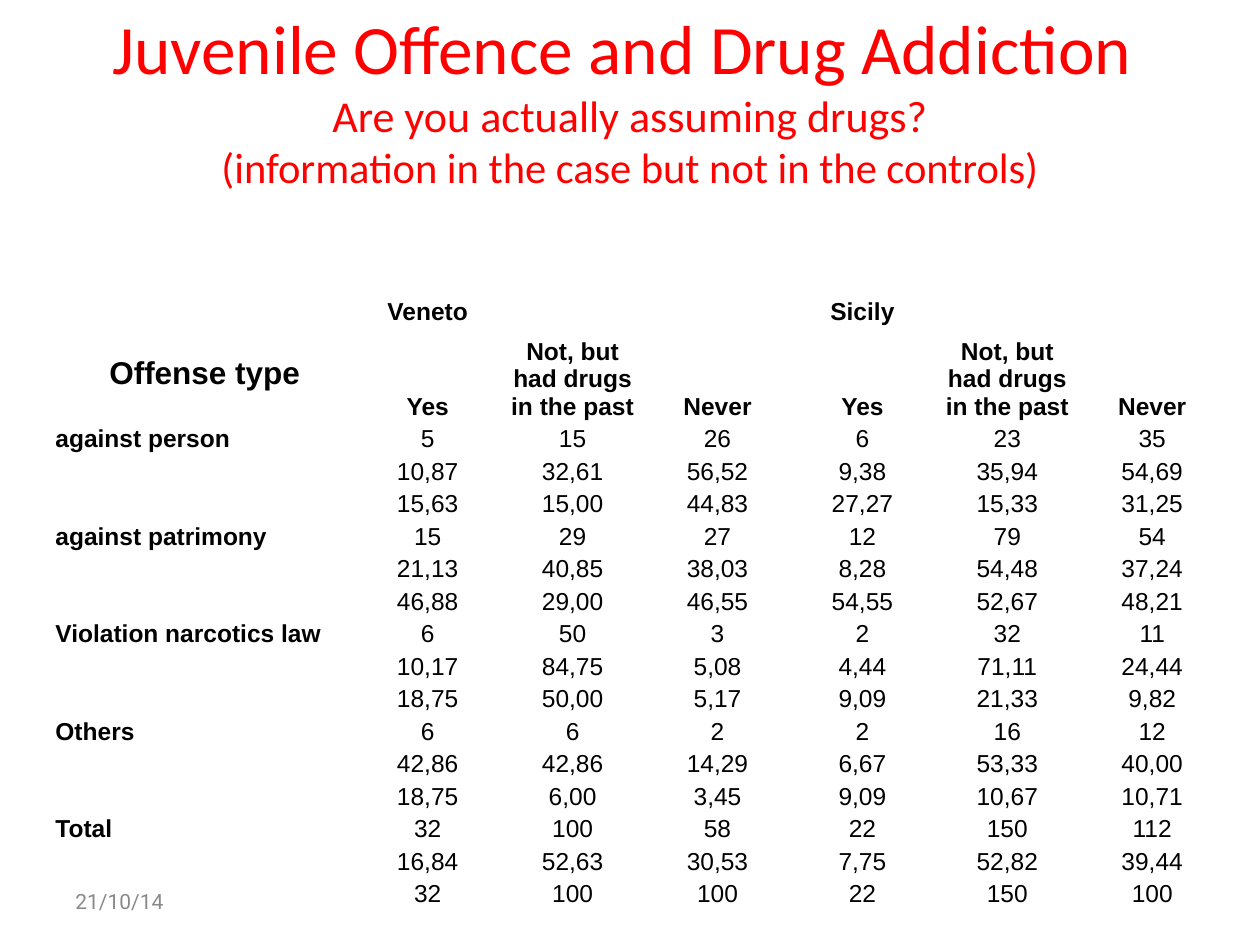
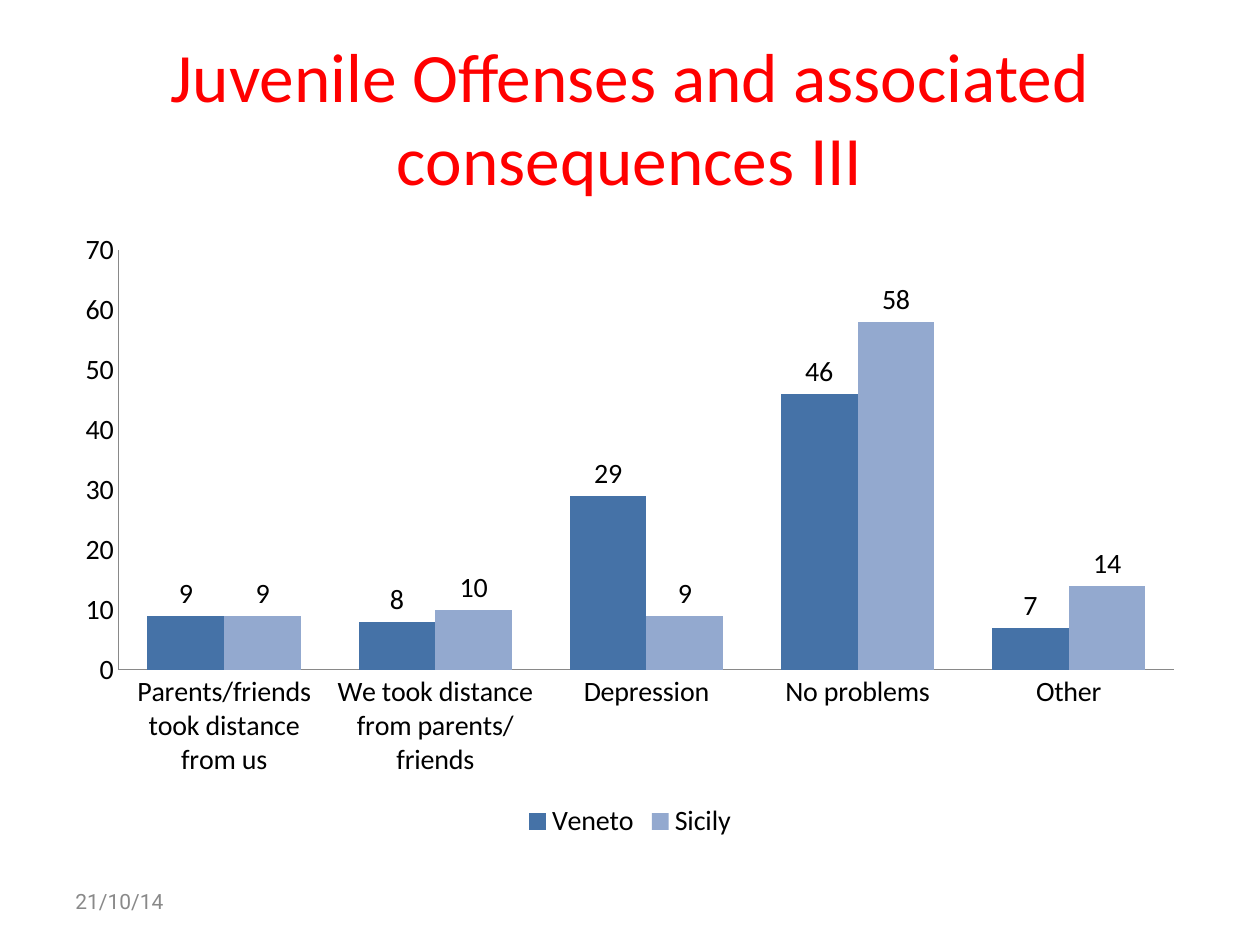
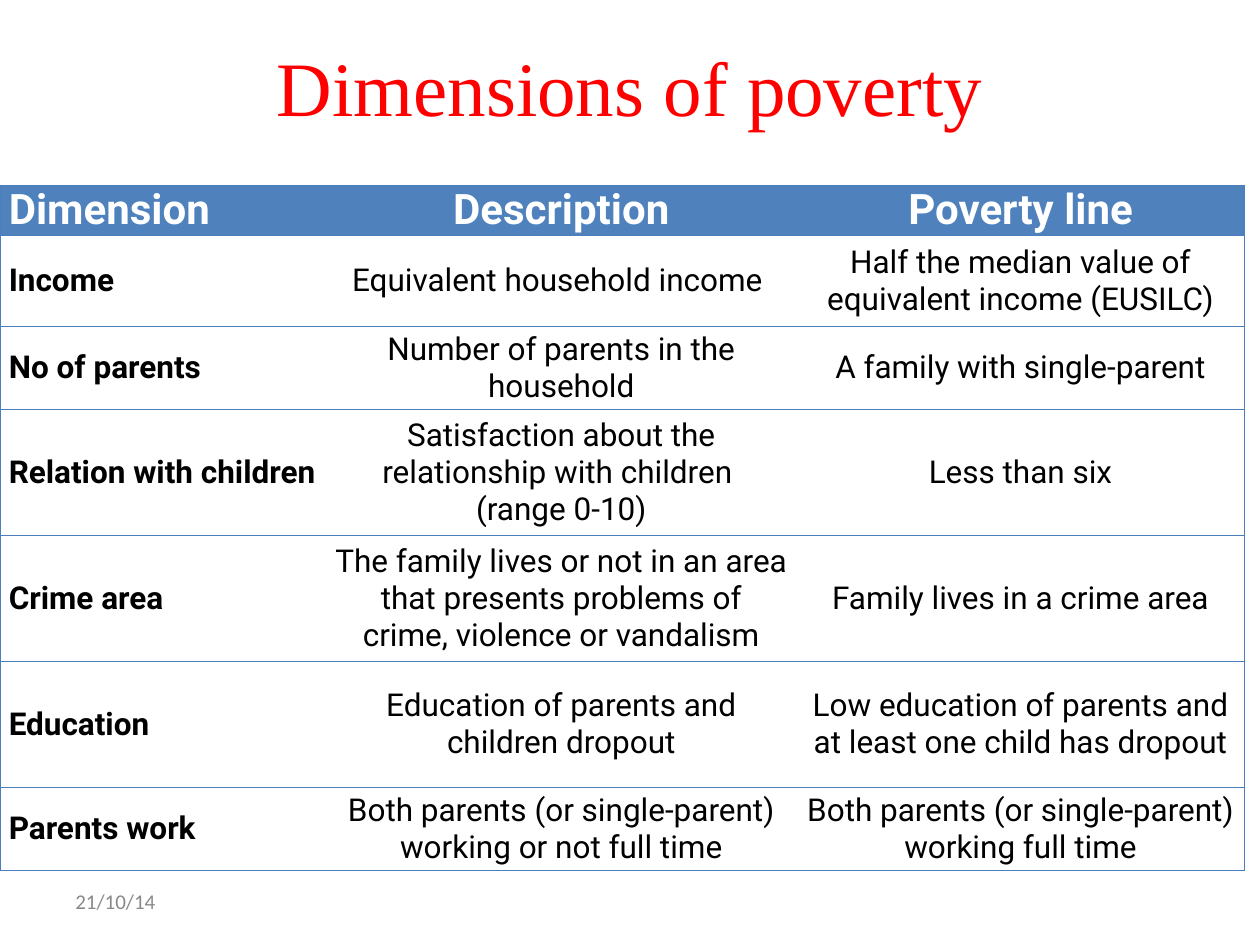
from lxml import etree
from pptx import Presentation
from pptx.chart.data import CategoryChartData
from pptx.dml.color import RGBColor
from pptx.enum import chart as charts, text
from pptx.oxml.ns import qn
from pptx.util import Inches, Pt

RED = RGBColor(0xFF, 0x00, 0x00)
BLACK = RGBColor(0x00, 0x00, 0x00)
WHITE = RGBColor(0xFF, 0xFF, 0xFF)
DATE_GREY = RGBColor(0x89, 0x89, 0x89)
HEADER_BLUE = RGBColor(0x4F, 0x81, 0xBD)
RULE_BLUE = RGBColor(0x4B, 0x7E, 0xBC)
VENETO_BLUE = RGBColor(0x45, 0x72, 0xA7)
SICILY_BLUE = RGBColor(0x93, 0xA9, 0xCF)
PLAIN_TABLE_STYLE = "{2D5ABB26-0587-4C30-8999-92F81FD0307C}"
LEFT, CENTER = text.PP_ALIGN.LEFT, text.PP_ALIGN.CENTER
MIDDLE, BOTTOM = text.MSO_ANCHOR.MIDDLE, text.MSO_ANCHOR.BOTTOM


def write(frame, paragraphs, font, color, align, bold=False):
    """Fill a text frame; a paragraph is a list of (words, size) lines."""
    frame.word_wrap = True
    for i, lines in enumerate(paragraphs):
        para = frame.paragraphs[0] if i == 0 else frame.add_paragraph()
        para.alignment = align
        for j, (words, size) in enumerate(lines):
            if j:
                para.add_line_break()
            span = para.add_run()
            span.text = words
            span.font.name = font
            span.font.size = Pt(size)
            span.font.bold = bold
            span.font.color.rgb = color


def add_plain_table(page, left, top, widths, heights):
    frame = page.shapes.add_table(len(heights), len(widths), Inches(left), Inches(top),
                                  Inches(sum(widths)), Inches(sum(heights)))
    table = frame.table
    table.first_row = table.horz_banding = False
    table._tbl.tblPr.find(qn("a:tableStyleId")).text = PLAIN_TABLE_STYLE
    for column, width in zip(table.columns, widths):
        column.width = Inches(width)
    for row, height in zip(table.rows, heights):
        row.height = Inches(height)
    for cell in table.iter_cells():
        cell.fill.background()
    return table


deck = Presentation()
deck.slide_width, deck.slide_height = Inches(10), Inches(7.5)

# Titles and dates: top and height, font, lines, date font
headings = [
    (0.3, 1.25, "Calibri", [("Juvenile Offence and Drug Addiction ", 39.6),
                            ("Are you actually assuming drugs?", 25.2),
                            ("(information in the case but not in the controls)", 24.3)], "Roboto"),
    (0.3, 1.25, "Calibri", [("Juvenile Offenses and associated consequences III", 39.6)], "Roboto"),
    (0.21, 0.94, "Times New Roman", [("Dimensions of poverty", 44)], "Calibri"),
]
pages, titles = [], []
for top, height, font, lines, date_font in headings:
    page = deck.slides.add_slide(deck.slide_layouts[6])
    title = page.shapes.add_textbox(Inches(0.5), Inches(top), Inches(9), Inches(height))
    date = page.shapes.add_textbox(Inches(0.5), Inches(6.95), Inches(2.33), Inches(0.4))
    title.text_frame.vertical_anchor = date.text_frame.vertical_anchor = MIDDLE
    write(title.text_frame, [lines], font, RED, CENTER)
    write(date.text_frame, [[("21/10/14", 12)]], date_font, DATE_GREY, LEFT)
    pages.append(page)
    titles.append(title)
offence_page, consequence_page, poverty_page = pages
titles[0].text_frame.margin_bottom = Inches(0.33)

# Slide 1: counts, row percentages and column percentages by offense type
answers = ["Yes", "Not, but had drugs in the past", "Never"]
offences = {
    "against person": ["5 15 26 6 23 35",
                       "10,87 32,61 56,52 9,38 35,94 54,69",
                       "15,63 15,00 44,83 27,27 15,33 31,25"],
    "against patrimony": ["15 29 27 12 79 54",
                          "21,13 40,85 38,03 8,28 54,48 37,24",
                          "46,88 29,00 46,55 54,55 52,67 48,21"],
    "Violation narcotics law": ["6 50 3 2 32 11",
                                "10,17 84,75 5,08 4,44 71,11 24,44",
                                "18,75 50,00 5,17 9,09 21,33 9,82"],
    "Others": ["6 6 2 2 16 12",
               "42,86 42,86 14,29 6,67 53,33 40,00",
               "18,75 6,00 3,45 9,09 10,67 10,71"],
    "Total": ["32 100 58 22 150 112",
              "16,84 52,63 30,53 7,75 52,82 39,44",
              "32 100 100 22 150 100"],
}
rows = [["", "Veneto", "", "", "Sicily", "", ""], ["Offense type"] + answers * 2]
for offence, measures in offences.items():
    for i, measure in enumerate(measures):
        rows.append([offence if i == 0 else ""] + measure.split())

line_height = (4.88 - 0.75) / 16
table = add_plain_table(offence_page, 0.43, 2.33, [2.39] + [1.15] * 6,
                        [line_height, 0.75] + [line_height] * 15)
for r, values in enumerate(rows):
    for c, value in enumerate(values):
        cell = table.cell(r, c)
        cell.margin_left = cell.margin_right = cell.margin_top = Inches(0.01)
        cell.margin_bottom = 0
        is_corner = value == "Offense type"
        cell.vertical_anchor = MIDDLE if is_corner else BOTTOM
        if value:
            write(cell.text_frame, [[(value, 18 if is_corner else 14)]], "Arial", BLACK,
                  LEFT if c == 0 and r > 1 else CENTER, bold=c == 0 or r < 2)
        else:
            etree.SubElement(cell.text_frame.paragraphs[0]._p, qn("a:endParaRPr"), sz="1400")

# Slide 2: consequences by region
data = CategoryChartData(number_format="0")
data.categories = ["Parents/friends took distance from us", "We took distance from parents/friends",
                   "Depression", "No problems", "Other"]
data.add_series("Veneto", [9, 8, 29, 46, 7])
data.add_series("Sicily", [9, 10, 9, 58, 14])
chart = consequence_page.shapes.add_chart(charts.XL_CHART_TYPE.COLUMN_CLUSTERED, Inches(0.5),
                                          Inches(1.75), Inches(9), Inches(4.95), data).chart
chart.has_title = False
chart.font.name, chart.font.size = "Calibri", Pt(16)
chart.font.color.rgb = BLACK
chart.has_legend = True
chart.legend.position = charts.XL_LEGEND_POSITION.BOTTOM
chart.legend.include_in_layout = False
for axis in (chart.category_axis, chart.value_axis):
    axis.major_tick_mark = axis.minor_tick_mark = charts.XL_TICK_MARK.NONE
    axis.has_major_gridlines = False
    axis.format.line.color.rgb = DATE_GREY
    axis.format.line.width = Pt(0.75)
chart.value_axis.minimum_scale = 0
chart.value_axis.maximum_scale = 70
chart.value_axis.major_unit = 10
plot = chart.plots[0]
plot.vary_by_categories = False
plot.gap_width, plot.overlap = 75, 0
for series, color in zip(plot.series, (VENETO_BLUE, SICILY_BLUE)):
    series.format.fill.solid()
    series.format.fill.fore_color.rgb = color
    labels = series.data_labels
    labels.show_value = True
    labels.number_format, labels.number_format_is_linked = "0", False
    labels.position = charts.XL_LABEL_POSITION.OUTSIDE_END

# Slide 3: what counts as poor in each dimension
dimensions = [
    ("Dimension", ["Description"], "Poverty line"),
    ("Income", ["Equivalent household income "],
     "Half the median value of equivalent income (EUSILC)"),
    ("No of parents", ["Number of parents in the household"], "A family with single-parent"),
    ("Relation with children",
     ["Satisfaction about the relationship with children ", "(range 0-10)"], "Less than six"),
    ("Crime area",
     ["The family lives or not in an area that presents problems of crime, violence or vandalism"],
     "Family lives in a crime area"),
    ("Education", ["Education of parents and children dropout"],
     "Low education of parents and at least one child has dropout"),
    ("Parents work", ["Both parents (or single-parent) working or not full time"],
     "Both parents (or single-parent) working full time"),
]
table = add_plain_table(poverty_page, 0, 1.47, [2.59, 3.73, 3.56],
                        [0.4, 0.72, 0.66, 1, 1, 1, 0.66])
for r, (dimension, description, poverty_line) in enumerate(dimensions):
    for c, paragraphs in enumerate(([dimension], description, [poverty_line])):
        cell = table.cell(r, c)
        is_header = r == 0
        cell.margin_left = cell.margin_right = Inches(0.07)
        cell.margin_top = cell.margin_bottom = 0
        cell.vertical_anchor = MIDDLE
        if is_header:
            cell.fill.solid()
            cell.fill.fore_color.rgb = HEADER_BLUE
        write(cell.text_frame, [[(words, 24 if is_header else 18)] for words in paragraphs],
              "Roboto", WHITE if is_header else BLACK, LEFT if c == 0 else CENTER,
              bold=is_header or c == 0)
        sides = ["lnL"] * (c == 0) + ["lnR"] * (c == 2) + ["lnT", "lnB"]
        for i, side in enumerate(sides):
            border = etree.Element(qn("a:" + side), w=str(Pt(0.75)))
            fill = etree.SubElement(border, qn("a:solidFill"))
            etree.SubElement(fill, qn("a:srgbClr"), val=str(RULE_BLUE))
            cell._tc.tcPr.insert(i, border)

deck.save("out.pptx")
